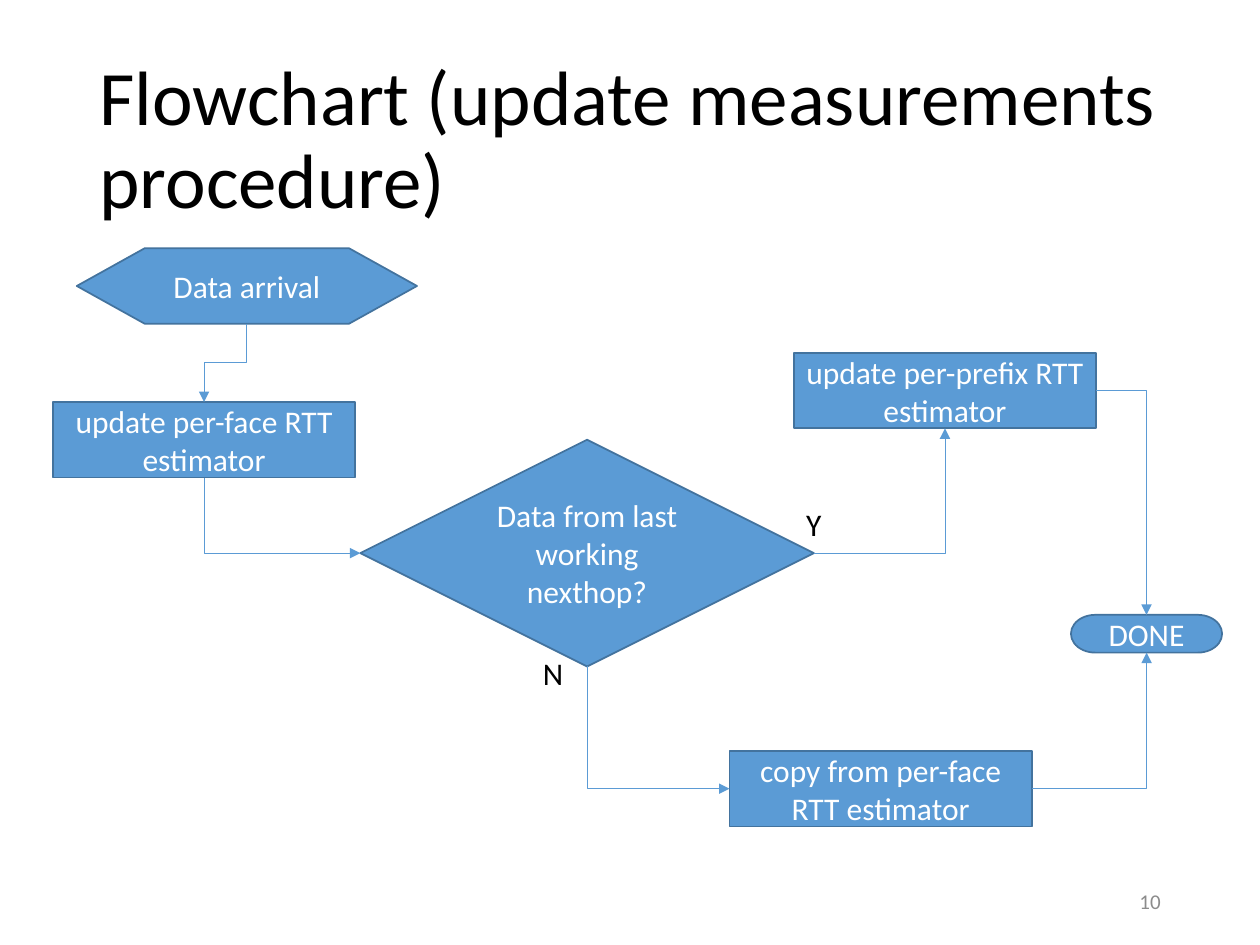
from lxml.etree import SubElement
from pptx import Presentation
from pptx.dml.color import RGBColor
from pptx.enum.shapes import MSO_CONNECTOR, MSO_SHAPE
from pptx.enum.text import MSO_ANCHOR, MSO_AUTO_SIZE, PP_ALIGN
from pptx.oxml.ns import qn
from pptx.util import Inches, Pt

COLORS = {
    "fill": "5B9BD5",
    "outline": "43739E",
    "on_fill": "FFFFFF",
    "text": "000000",
    "number": "8C8C8C",
}
FONT = "Calibri"
TOP, LEFT, BOTTOM, RIGHT = range(4)  # connection sites
PROCESS_SIZE = (2.4, 0.6)

# name: preset, text, position and size within the chart
STEPS = {
    "arrival": (MSO_SHAPE.FLOWCHART_PREPARATION, "Data arrival", (0.19, 0), (2.7, 0.6)),
    "decision": (MSO_SHAPE.FLOWCHART_DECISION, "Data from last working nexthop?",
                 (2.44, 1.52), (3.6, 1.8)),
    "prefix": (MSO_SHAPE.FLOWCHART_PROCESS, "update per-prefix RTT estimator",
               (5.88, 0.83), PROCESS_SIZE),
    "copy": (MSO_SHAPE.FLOWCHART_PROCESS, "copy from per-face RTT estimator",
             (5.37, 3.99), PROCESS_SIZE),
    "face": (MSO_SHAPE.FLOWCHART_PROCESS, "update per-face RTT estimator",
             (0, 1.22), PROCESS_SIZE),
    "done": (MSO_SHAPE.FLOWCHART_TERMINATOR, "DONE", (8.08, 2.91), (1.2, 0.3)),
}
FLOWS = [
    ("arrival", BOTTOM, "face", TOP),
    ("face", BOTTOM, "decision", LEFT),
    ("decision", RIGHT, "prefix", BOTTOM),
    ("decision", BOTTOM, "copy", LEFT),
    ("prefix", RIGHT, "done", TOP),
    ("copy", RIGHT, "done", BOTTOM),
]
BRANCH_LABELS = [("Y", (5.88, 1.99), 0.32), ("N", (3.79, 3.17), 0.36)]


def rgb(name):
    return RGBColor.from_string(COLORS[name])


def set_text(shape, text, size, color, align=PP_ALIGN.LEFT, anchor=MSO_ANCHOR.MIDDLE):
    frame = shape.text_frame
    frame.text = text
    frame.vertical_anchor = anchor
    paragraph = frame.paragraphs[0]
    paragraph.alignment = align
    font = paragraph.runs[0].font
    font.name, font.size, font.color.rgb = FONT, Pt(size), rgb(color)
    return paragraph


def add_title(slide, left, top, width, height):
    title = slide.shapes.title
    title.left, title.top, title.width, title.height = left, top, width, height
    paragraph = set_text(title, "Flowchart (update measurements procedure)", 44, "text")
    paragraph.line_spacing = 0.9
    title.text_frame.word_wrap = True
    title.text_frame.auto_size = MSO_AUTO_SIZE.NONE


def add_step(slide, preset, text, left, top, width, height):
    shape = slide.shapes.add_shape(preset, left, top, width, height)
    shape.shadow.inherit = False
    shape.fill.solid()
    shape.fill.fore_color.rgb = rgb("fill")
    shape.line.color.rgb = rgb("outline")
    shape.line.width = Pt(1)
    set_text(shape, text, 18, "on_fill", PP_ALIGN.CENTER)
    return shape


def turn_downward(connector):
    """Rotate a connector a quarter turn so that it leaves its start vertically."""
    x1, y1, x2, y2 = connector.begin_x, connector.begin_y, connector.end_x, connector.end_y
    center_x, center_y = (x1 + x2) // 2, (y1 + y2) // 2
    half_x, half_y = (y2 - y1) // 2, (x1 - x2) // 2
    connector.begin_x, connector.begin_y = center_x - half_x, center_y - half_y
    connector.end_x, connector.end_y = center_x + half_x, center_y + half_y
    connector._element.spPr.find(qn("a:xfrm")).set("rot", str(90 * 60000))


def add_flow(slide, source, source_site, target, target_site):
    connector = slide.shapes.add_connector(MSO_CONNECTOR.ELBOW, 0, 0, 0, 0)
    connector.begin_connect(source, source_site)
    connector.end_connect(target, target_site)
    properties = connector._element.spPr
    if source_site % 2 != target_site % 2:  # perpendicular sites need one corner
        properties.find(qn("a:prstGeom")).set("prst", "bentConnector2")
    if source_site == BOTTOM:
        turn_downward(connector)
    connector.line.color.rgb = rgb("fill")
    connector.line.width = Pt(0.5)
    SubElement(connector.line._get_or_add_ln(), qn("a:tailEnd"), type="triangle")
    SubElement(properties, qn("a:effectLst"))


def add_branch_label(slide, text, left, top, width):
    label = slide.shapes.add_textbox(left, top, width, Inches(0.4))
    set_text(label, text, 18, "text", anchor=MSO_ANCHOR.TOP)
    label.text_frame.word_wrap = False
    label.text_frame.auto_size = MSO_AUTO_SIZE.SHAPE_TO_FIT_TEXT


def add_flowchart(slide, left, top):
    steps = {}
    for name, (preset, text, (x, y), (width, height)) in STEPS.items():
        steps[name] = add_step(slide, preset, text, left + Inches(x), top + Inches(y),
                               Inches(width), Inches(height))
    for source, source_site, target, target_site in FLOWS:
        add_flow(slide, steps[source], source_site, steps[target], target_site)
    for text, (x, y), width in BRANCH_LABELS:
        add_branch_label(slide, text, left + Inches(x), top + Inches(y), Inches(width))


def add_slide_number(slide, left, top, width, height):
    box = slide.shapes.add_textbox(left, top, width, height)
    box.text_frame.word_wrap = True
    set_text(box, "10", 12, "number", PP_ALIGN.RIGHT)


def main():
    presentation = Presentation()
    presentation.slide_width, presentation.slide_height = Inches(10), Inches(7.5)
    slide = presentation.slides.add_slide(presentation.slide_layouts[5])
    add_title(slide, Inches(0.69), Inches(0.4), Inches(8.62), Inches(1.45))
    add_flowchart(slide, Inches(0.42), Inches(1.97))
    add_slide_number(slide, Inches(7.06), Inches(6.95), Inches(2.25), Inches(0.4))
    presentation.save("out.pptx")


if __name__ == "__main__":
    main()
